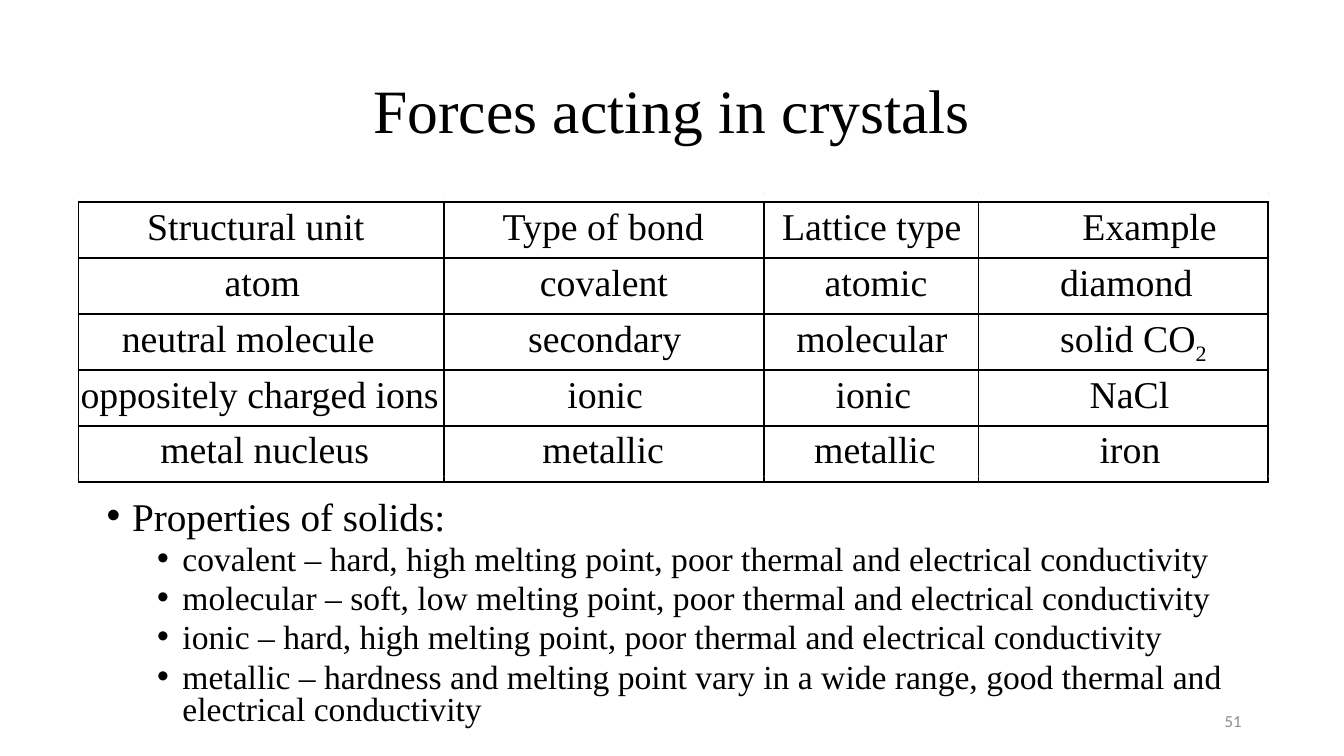
from lxml.etree import SubElement as Sub
from pptx import Presentation
from pptx.dml.color import RGBColor
from pptx.enum.shapes import MSO_SHAPE as Shape
from pptx.enum.text import MSO_ANCHOR as Anchor, PP_ALIGN as Align
from pptx.oxml.ns import qn
from pptx.util import Cm, Pt

BLACK = RGBColor(0x00, 0x00, 0x00)
GREY = RGBColor(0x8C, 0x8C, 0x8C)
PALE = RGBColor(0xD4, 0xD4, 0xD4)
SERIF = "Times New Roman"


def style(par, size, color=BLACK, font=SERIF):
    for run in par.runs:
        run.font.size = Pt(size)
        run.font.name = font
        run.font.color.rgb = color


def add_box(left, top, width, height, anchor):
    box = slide.shapes.add_textbox(Cm(left), Cm(top), Cm(width), Cm(height))
    frame = box.text_frame
    frame.word_wrap = True
    frame.vertical_anchor = anchor
    return frame


deck = Presentation()
deck.slide_width = Cm(33.87)
deck.slide_height = Cm(19.05)
slide = deck.slides.add_slide(deck.slide_layouts[6])

# Title
title = add_box(2.33, 1.02, 29.21, 3.68, Anchor.MIDDLE)
title.text = "Forces acting in crystals"
head = title.paragraphs[0]
head.alignment = Align.CENTER
head.line_spacing = 0.9
style(head, 44)

# Properties list
items = [
    (0, "Properties of solids:"),
    (1, "covalent – hard, high melting point, poor thermal and electrical conductivity"),
    (1, "molecular – soft, low melting point, poor thermal and electrical conductivity"),
    (1, "ionic – hard, high melting point, poor thermal and electrical conductivity"),
    (1, "metallic – hardness and melting point vary in a wide range, "
        "good thermal and electrical conductivity"),
]
body = add_box(2.44, 12.5, 29.16, 6.15, Anchor.TOP)
body.text = "\n".join(text for level, text in items)
for par, (level, text) in zip(body.paragraphs, items):
    par.level = level
    par.line_spacing = 0.8
    par.space_before = Pt(5 if level else 10)
    style(par, 24 if level else 28)
    props = par._p.get_or_add_pPr()
    props.set("marL", str(Cm(1.91 if level else 0.64)))
    props.set("indent", str(Cm(-0.64)))
    Sub(props, qn("a:buFont"), typeface="Arial")
    Sub(props, qn("a:buChar"), char="•")

# Table: each cell holds its text and where the text starts
edges = [1.98, 11.18, 19.25, 24.66, 31.95]
top, step = 5.1, 1.41
rows = [
    [("Structural unit", 3.71), ("Type of bond", 12.67),
     ("Lattice type", 19.71), ("Example", 27.28)],
    [("atom", 5.66), ("covalent", 13.61), ("atomic", 20.78), ("diamond", 26.72)],
    [("neutral molecule", 3.07), ("secondary", 13.31),
     ("molecular", 20.07), ("solid CO", 26.72)],
    [("oppositely charged ions", 2.03), ("ionic", 14.3),
     ("ionic", 21.06), ("NaCl", 27.46)],
    [("metal nucleus", 4.04), ("metallic", 13.67), ("metallic", 20.52), ("iron", 27.71)],
]
table = slide.shapes.add_table(
    len(rows), 4, Cm(edges[0]), Cm(top),
    Cm(edges[-1] - edges[0]), Cm(step * len(rows))).table
table.first_row = False
table.horz_banding = False
for col, left, right in zip(table.columns, edges, edges[1:]):
    col.width = Cm(right - left)
for r, row in enumerate(rows):
    table.rows[r].height = Cm(step)
    for c, (text, start) in enumerate(row):
        cell = table.cell(r, c)
        cell.margin_left = Cm(start - edges[c])
        cell.margin_top = Cm(0.1)
        cell.margin_right = cell.margin_bottom = 0
        cell.text = text
        par = cell.text_frame.paragraphs[0]
        if text == "solid CO":
            sub = par.add_run()
            sub.text = "2"
            sub._r.get_or_add_rPr().set("baseline", "-25000")
        style(par, 27)
        props = cell._tc.get_or_add_tcPr()
        for side in ("a:lnL", "a:lnR", "a:lnT", "a:lnB"):
            line = Sub(props, qn(side), w=str(Pt(1.5)))
            Sub(Sub(line, qn("a:solidFill")), qn("a:srgbClr"), val=str(BLACK))
        cell.fill.background()

# Pale specks along the table's edges
specks = [(x, y) for y in (4.85, 11.99) for x in edges]
specks += [(31.98, 4.9 + step * i) for i in range(6)]
for x, y in specks:
    dot = slide.shapes.add_shape(Shape.RECTANGLE, Cm(x), Cm(y), Cm(0.02), Cm(0.02))
    dot.shadow.inherit = False
    dot.fill.solid()
    dot.fill.fore_color.rgb = PALE
    dot.line.fill.background()

# Slide number
foot = add_box(23.92, 17.66, 7.62, 1.01, Anchor.MIDDLE)
foot.text = "51"
foot.paragraphs[0].alignment = Align.RIGHT
style(foot.paragraphs[0], 12, GREY, "Calibri")

deck.save("out.pptx")
